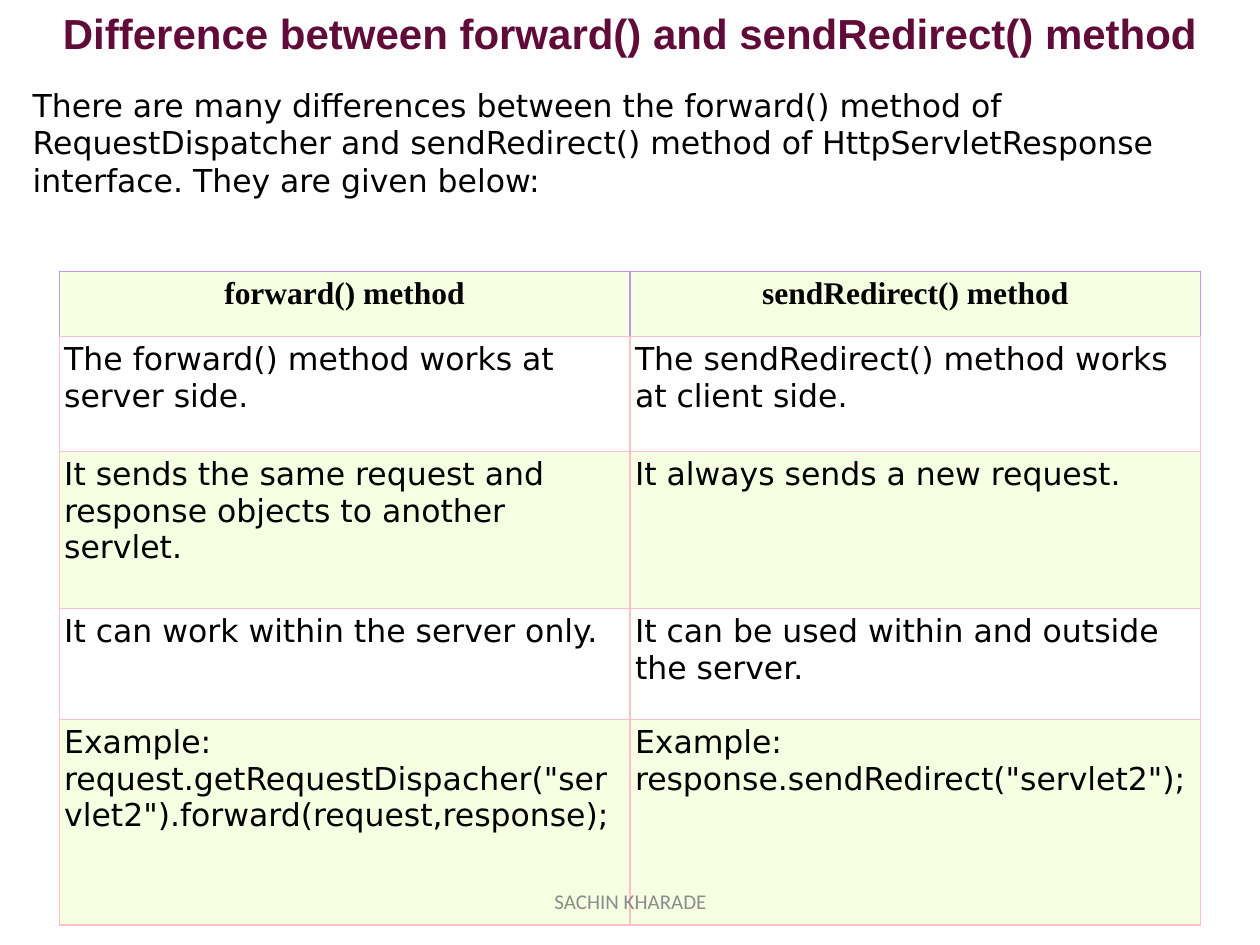
from dataclasses import dataclass
from typing import Any

from lxml import etree
from pptx import Presentation
from pptx.dml.color import RGBColor
from pptx.enum import text
from pptx.oxml import ns
from pptx.util import Inches, Pt

WIDTH, HEIGHT = 10, 7.5
CENTER, LEFT = text.PP_ALIGN.CENTER, text.PP_ALIGN.LEFT
MIDDLE, TOP = text.MSO_ANCHOR.MIDDLE, text.MSO_ANCHOR.TOP


def color(value):
    return RGBColor.from_string(value)


@dataclass
class SlideStyle:
    slide: Any
    ink: str = "000000"
    heading: str = "610B38"
    muted: str = "8C8C8C"
    paper: str = "FFFFFF"
    band: str = "F6FFE1"
    rule: str = "FFC0CB"
    header_rule: str = "C096F1"
    body_font: str = "DejaVu Sans"

    def place(self, item, left, top, width, height):
        """Position an item by shares of the slide's size."""
        item.left, item.width = (Inches(WIDTH * s) for s in (left, width))
        item.top, item.height = (Inches(HEIGHT * s) for s in (top, height))

    def add_words(self, frame, words, size, font, ink, bold=False,
                  align=LEFT, anchor=TOP):
        frame.word_wrap = True
        frame.vertical_anchor = anchor
        paragraph = frame.paragraphs[0]
        paragraph.alignment = align
        paragraph.space_before = Pt(0)
        run = paragraph.add_run()
        run.text = words
        run.font.size, run.font.name, run.font.bold = Pt(size), font, bold
        run.font.color.rgb = color(ink)
        return paragraph

    def title(self, words, box):
        heading = self.slide.shapes.title
        self.place(heading, *box)
        heading.fill.solid()
        heading.fill.fore_color.rgb = color(self.paper)
        heading.text_frame.auto_size = text.MSO_AUTO_SIZE.NONE
        self.add_words(heading.text_frame, words, 24, "Arial", self.heading,
                       True, CENTER, MIDDLE)

    def intro(self, words, box):
        body = self.slide.placeholders[1]
        self.place(body, *box)
        body.text_frame.auto_size = text.MSO_AUTO_SIZE.NONE
        paragraph = self.add_words(body.text_frame, words, 18,
                                   self.body_font, self.ink)
        # Plain paragraph: no bullet, no hanging indent
        properties = paragraph._p.get_or_add_pPr()
        properties.set("marL", "0")
        properties.set("indent", "0")
        etree.SubElement(properties, ns.qn("a:buNone"))

    def footer(self, words, box):
        credit = self.slide.shapes.add_textbox(0, 0, 0, 0)
        self.place(credit, *box)
        self.add_words(credit.text_frame, words, 12, "Calibri", self.muted,
                       align=CENTER, anchor=MIDDLE)

    def borders(self, cell, side_color, top_color):
        properties = cell._tc.get_or_add_tcPr()
        sides = {"L": side_color, "R": side_color,
                 "T": top_color, "B": self.rule}
        for index, (side, value) in enumerate(sides.items()):
            line = etree.Element(ns.qn(f"a:ln{side}"), w=str(Pt(0.75)))
            fill = etree.SubElement(line, ns.qn("a:solidFill"))
            etree.SubElement(fill, ns.qn("a:srgbClr"), val=value)
            properties.insert(index, line)

    def comparison(self, rows, heights, left, top, width):
        columns = len(rows[0])
        grid = self.slide.shapes.add_table(
            len(rows), columns, Inches(WIDTH * left), Inches(HEIGHT * top),
            Inches(WIDTH * width), Inches(sum(heights))).table
        grid.first_row = grid.horz_banding = False
        for r, (entries, height) in enumerate(zip(rows, heights)):
            grid.rows[r].height = Inches(height)
            is_header = r == 0
            line = self.header_rule if is_header else self.rule
            for c, words in enumerate(entries):
                cell = grid.cell(r, c)
                cell.margin_left = cell.margin_right = Inches(0.04)
                cell.margin_top = cell.margin_bottom = Inches(0.04)
                cell.fill.solid()
                cell.fill.fore_color.rgb = color(
                    self.paper if r % 2 else self.band)
                self.borders(cell, line, line)
                self.add_words(
                    cell.text_frame, words, 18,
                    "Times New Roman" if is_header else self.body_font,
                    self.ink, is_header, CENTER if is_header else LEFT)


METHODS = [
    ("forward() method", "sendRedirect() method"),
    ("The forward() method works at server side.",
     "The sendRedirect() method works at client side."),
    ("It sends the same request and response objects to another servlet.",
     "It always sends a new request."),
    ("It can work within the server only.",
     "It can be used within and outside the server."),
    ('Example: request.getRequestDispacher("servlet2")'
     '.forward(request,response);',
     'Example: response.sendRedirect("servlet2");'),
]


def main():
    deck = Presentation()
    deck.slide_width, deck.slide_height = Inches(WIDTH), Inches(HEIGHT)
    page = SlideStyle(deck.slides.add_slide(deck.slide_layouts[1]))

    # Heading and introduction
    page.title("Difference between forward() and sendRedirect() method",
               (0, 0, 1, 0.07))
    page.intro("There are many differences between the forward() method of "
               "RequestDispatcher and sendRedirect() method of "
               "HttpServletResponse interface. They are given below:",
               (0.016, 0.084, 0.961, 0.135))

    # Method comparison
    page.comparison(METHODS, [0.52, 0.91, 1.25, 0.88, 1.63],
                    left=0.047, top=0.287, width=0.906)

    # Footer over the last row
    page.footer("SACHIN KHARADE", (0.342, 0.927, 0.317, 0.053))

    deck.save("out.pptx")


if __name__ == "__main__":
    main()
